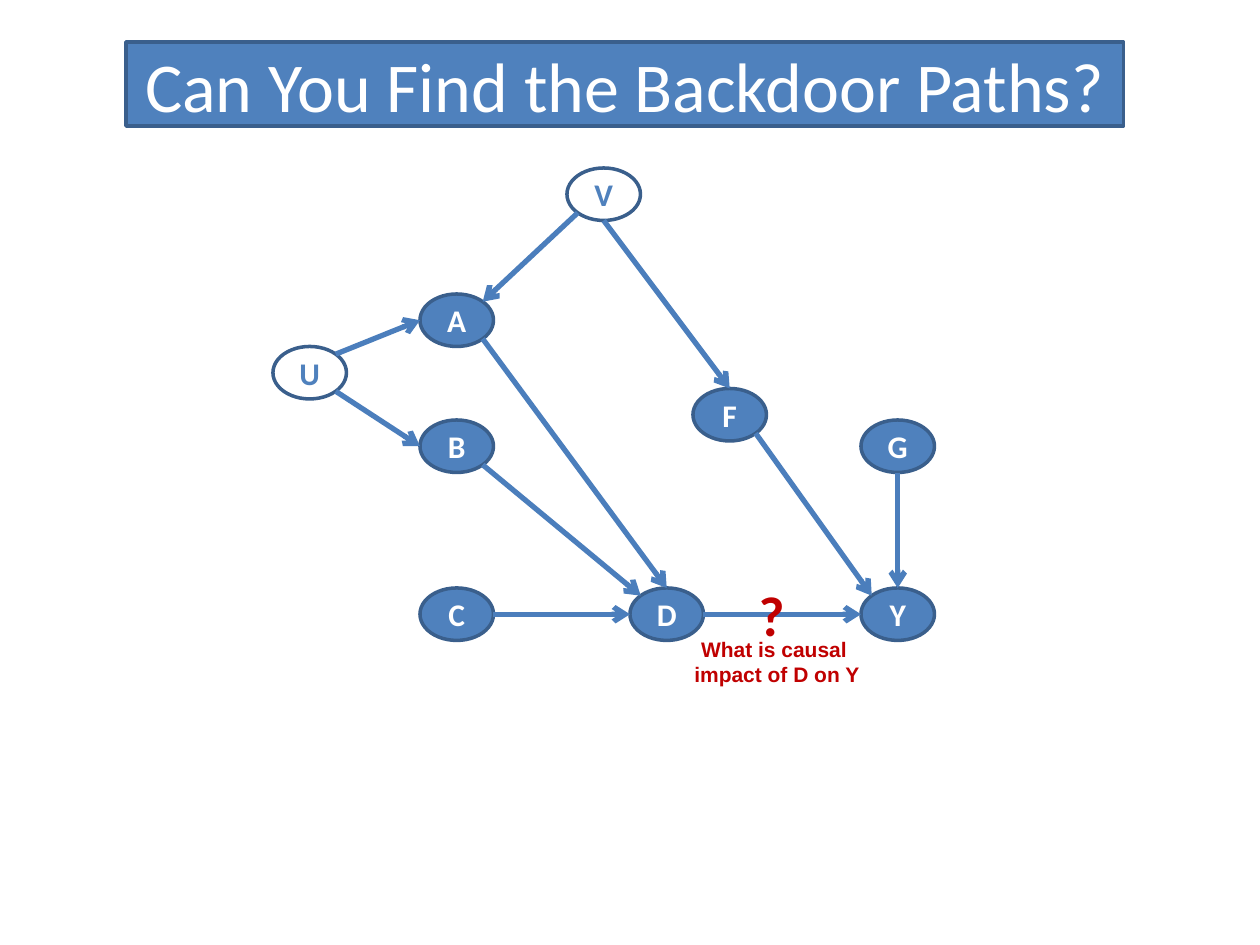
from lxml.etree import SubElement
from pptx import Presentation
from pptx.dml.color import RGBColor
from pptx.enum.shapes import MSO_CONNECTOR, MSO_SHAPE
from pptx.enum.text import MSO_ANCHOR, MSO_AUTO_SIZE, PP_ALIGN
from pptx.oxml.ns import qn
from pptx.util import Pt

BLUE = RGBColor(0x4F, 0x81, 0xBD)
DARK_BLUE = RGBColor(0x3A, 0x5F, 0x8C)
ARROW_BLUE = RGBColor(0x4B, 0x7E, 0xBC)
RED = RGBColor(0xC0, 0x00, 0x00)
WHITE = RGBColor(0xFF, 0xFF, 0xFF)

NODE_WIDTH, NODE_HEIGHT = 42, 30
OBSERVED = {
    "A": (240, 168), "B": (240, 240), "C": (240, 336), "D": (360, 336),
    "F": (396, 222), "G": (492, 240), "Y": (492, 336),
}
UNOBSERVED = {"U": (156, 198), "V": (324, 96)}
POSITIONS = OBSERVED | UNOBSERVED

DIAGONAL = 0.5 ** 0.5
SIDES = {
    "top": (0, -1), "bottom": (0, 1), "left": (-1, 0), "right": (1, 0),
    "top left": (-DIAGONAL, -DIAGONAL), "top right": (DIAGONAL, -DIAGONAL),
    "bottom left": (-DIAGONAL, DIAGONAL), "bottom right": (DIAGONAL, DIAGONAL),
}
PATHS = [
    ("A", "bottom right", "D", "top"),
    ("B", "bottom right", "D", "top left"),
    ("C", "right", "D", "left"),
    ("U", "top right", "A", "left"),
    ("U", "bottom right", "B", "left"),
    ("V", "bottom left", "A", "top right"),
    ("V", "bottom", "F", "top"),
    ("F", "bottom right", "Y", "top left"),
    ("D", "right", "Y", "left"),
    ("G", "bottom", "Y", "top"),
]


def node_edge(name, side):
    left, top = POSITIONS[name]
    across, down = SIDES[side]
    return (Pt(left + NODE_WIDTH / 2 * (1 + across)),
            Pt(top + NODE_HEIGHT / 2 * (1 + down)))


class CausalDiagram:
    def __init__(self, slide):
        self.slide = slide

    def set_text(self, frame, text, size, color, font="Calibri", bold=True):
        paragraph = frame.paragraphs[0]
        paragraph.text = text
        paragraph.alignment = PP_ALIGN.CENTER
        for run in paragraph.runs:
            run.font.name = font
            run.font.size = Pt(size)
            run.font.bold = bold
            run.font.color.rgb = color

    def outline(self, shape):
        shape.line.color.rgb = DARK_BLUE
        shape.line.width = Pt(2)

    def title(self, text, left, top, width, height):
        heading = self.slide.shapes.title
        heading.left, heading.top = Pt(left), Pt(top)
        heading.width, heading.height = Pt(width), Pt(height)
        heading.fill.solid()
        heading.fill.fore_color.rgb = BLUE
        self.outline(heading)
        frame = heading.text_frame
        frame.auto_size = MSO_AUTO_SIZE.NONE
        frame.vertical_anchor = MSO_ANCHOR.MIDDLE
        self.set_text(frame, text, 40, WHITE, bold=False)

    def ellipse(self, text, left, top, width, height, size, color):
        oval = self.slide.shapes.add_shape(
            MSO_SHAPE.OVAL, Pt(left), Pt(top), Pt(width), Pt(height))
        oval.shadow.inherit = False
        oval.fill.background()
        oval.line.fill.background()
        frame = oval.text_frame
        frame.margin_left = frame.margin_right = 0
        frame.margin_top = frame.margin_bottom = 0
        frame.word_wrap = False
        frame.vertical_anchor = MSO_ANCHOR.MIDDLE
        self.set_text(frame, text, size, color)
        return oval

    def node(self, name, left, top, observed):
        variable = self.ellipse(name, left, top, NODE_WIDTH, NODE_HEIGHT, 18,
                                WHITE if observed else BLUE)
        self.outline(variable)
        if observed:
            variable.fill.solid()
            variable.fill.fore_color.rgb = BLUE

    def arrow(self, cause, cause_side, effect, effect_side):
        path_line = self.slide.shapes.add_connector(
            MSO_CONNECTOR.STRAIGHT,
            *node_edge(cause, cause_side), *node_edge(effect, effect_side))
        path_line.line.color.rgb = ARROW_BLUE
        path_line.line.width = Pt(3)
        properties = path_line.element.spPr
        SubElement(properties.find(qn("a:ln")), qn("a:tailEnd"), type="arrow")
        SubElement(properties, qn("a:effectLst"))

    def caption(self, text, left, top, width, height):
        note = self.slide.shapes.add_textbox(
            Pt(left), Pt(top), Pt(width), Pt(height))
        note.text_frame.word_wrap = True
        self.set_text(note.text_frame, text, 12, RED, font="Arial")


def main():
    presentation = Presentation()
    presentation.slide_width, presentation.slide_height = Pt(720), Pt(540)
    slide = presentation.slides.add_slide(presentation.slide_layouts[5])
    diagram = CausalDiagram(slide)
    diagram.title("Can You Find the Backdoor Paths?", 72, 24, 570, 48)
    for name, (left, top) in POSITIONS.items():
        diagram.node(name, left, top, name in OBSERVED)
    for path_ends in PATHS:
        diagram.arrow(*path_ends)
    diagram.ellipse("?", 426, 336, 30, 30, 32, RED)
    diagram.caption("What is causal \vimpact of D on Y", 264, 360, 360, 36)
    presentation.save("out.pptx")


if __name__ == "__main__":
    main()
